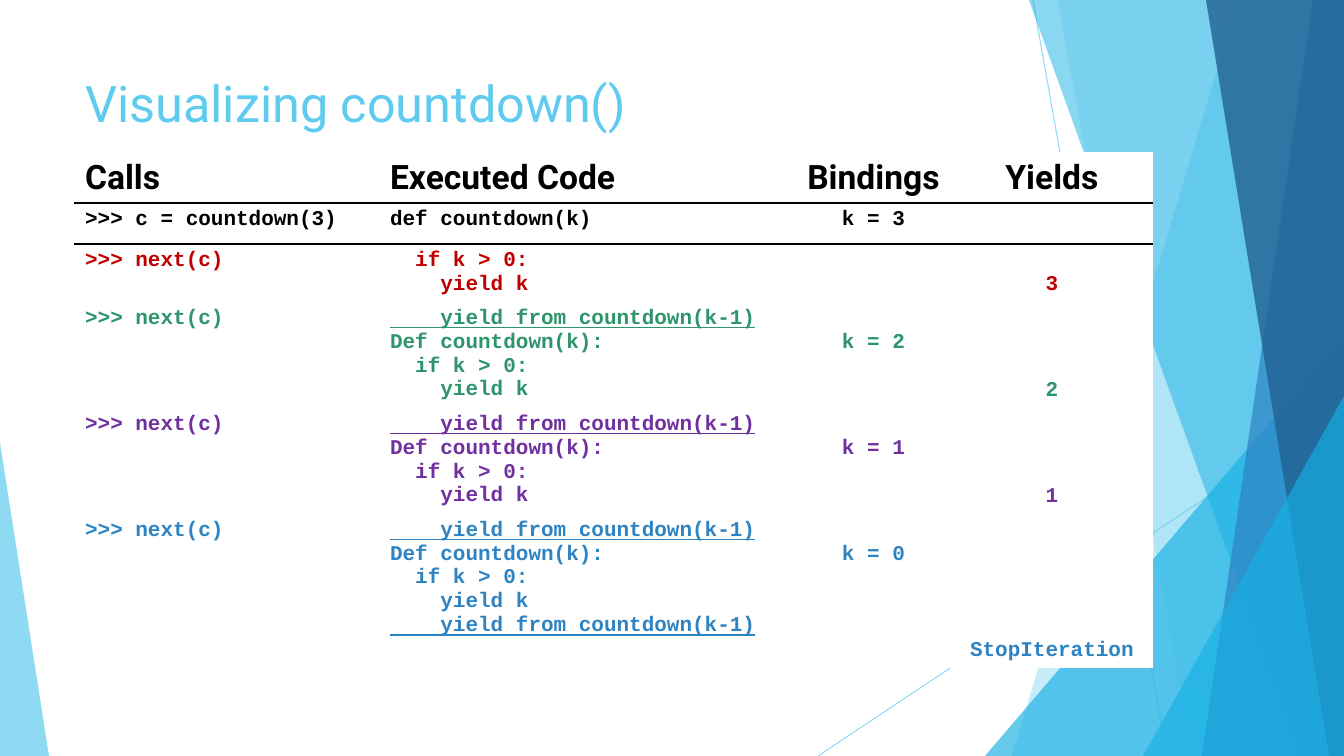
from lxml import etree
from pptx import Presentation
from pptx import util as u
from pptx.dml.color import RGBColor
from pptx.enum import shapes, text
from pptx.oxml import ns

PX = 914400 / 100.8
HUES = {"sky": "5FCBEF", "cyan": "17B0E4", "blue": "2E83C3", "navy": "226292",
        "black": "000000", "white": "FFFFFF", "red": "C00000",
        "green": "2E946B", "plum": "7030A0"}


def px(n):
    return u.Emu(round(n * PX))


def tint(fill, node, hue, alpha):
    fill.solid()
    fill.fore_color.rgb = RGBColor.from_string(HUES[hue])
    for clr in node.iter(ns.qn("a:srgbClr")):
        etree.SubElement(clr, ns.qn("a:alpha"), val=str(alpha * 1000))


deck = Presentation()
deck.slide_width, deck.slide_height = px(1344), px(756)
slide = deck.slides.add_slide(deck.slide_layouts[5])
parts = slide.shapes

for ends in [(1033, 0, 1167, 756), (1344, 406, 818, 756)]:
    line = parts.add_connector(shapes.MSO_CONNECTOR.STRAIGHT, *map(px, ends))
    tint(line.line.fill, line.element, "sky", 70)
    line.line.width = u.Pt(0.75)
    etree.SubElement(line.element.spPr, ns.qn("a:effectLst"))

decor = [("band", (1238, 1012), "sky", 36),
         ("band", (1058, 1192), "sky", 20),
         ("peak", (985, 336, 359, 420, 1), "cyan", 66),
         ("band", (1029, 1301), "cyan", 50),
         ("band", (1313, 1202), "blue", 70),
         ("band", (1206, 1329), "navy", 80),
         ("peak", (1143, 396, 201, 360, 1), "cyan", 66),
         ("peak", (0, 443, 49, 313, 0), "sky", 70)]
for kind, spot, hue, alpha in decor:
    if kind == "band":
        top, foot = spot
        path = parts.build_freeform(top, 0, scale=PX)
        path.add_line_segments([(1344, 0), (1344, 756), (foot, 756)])
        shape = path.convert_to_shape()
    else:
        shape = parts.add_shape(shapes.MSO_SHAPE.ISOSCELES_TRIANGLE,
                                *map(px, spot[:4]))
        shape.adjustments[0] = spot[4]
    tint(shape.fill, shape.element, hue, alpha)
    shape.line.fill.background()
    shape.shadow.inherit = False

title = parts.title
title.left, title.top, title.width, title.height = map(px, (75, 67, 948, 145))
frame = title.text_frame
frame.text = "Visualizing countdown()"
frame.vertical_anchor = text.MSO_ANCHOR.TOP
frame.auto_size = text.MSO_AUTO_SIZE.NONE
frame.paragraphs[0].alignment = text.PP_ALIGN.LEFT
font = frame.paragraphs[0].runs[0].font
font.name, font.size = "Roboto", u.Pt(36)
font.color.rgb = RGBColor.from_string(HUES["sky"])

step = "    yield from countdown(k-1)"
body = "  if k > 0:\n    yield k"
code = f"{step}\nDef countdown(k):\n{body}"
call = ">>> next(c)"
rows = [("black", 50, ["Calls", "Executed Code", "Bindings", "Yields"], 0),
        ("black", 41, [">>> c = countdown(3)", "def countdown(k)", "k = 3", ""], 0),
        ("red", 58, [call, body, "", "3"], 1),
        ("green", 106, [call, code, "k = 2", "2"], 3),
        ("plum", 105, [call, code, "k = 1", "1"], 3),
        ("blue", 153, [call, f"{code}\n{step}", "k = 0", "StopIteration"], 5)]
wide = [305, 415, 157, 200]
high = [row[1] for row in rows]
grid = parts.add_table(len(rows), len(wide), px(75), px(153),
                       px(sum(wide)), px(sum(high))).table
grid.first_row = grid.horz_banding = False
for col, w in zip(grid.columns, wide):
    col.width = px(w)

for r, (hue, h, words, drop) in enumerate(rows):
    grid.rows[r].height = px(h)
    for c, word in enumerate(words):
        cell = grid.cell(r, c)
        cell.fill.solid()
        cell.fill.fore_color.rgb = RGBColor.from_string(HUES["white"])
        cell.text_frame.text = word
        skip = drop if c == 3 else int(c == 2 and r > 2)
        cell.margin_top = px(5 + 24 * skip)
        for para in cell.text_frame.paragraphs:
            if c > 1:
                para.alignment = text.PP_ALIGN.CENTER
            for run in para.runs:
                font = run.font
                font.name = "Courier New" if r else "Roboto"
                font.size = u.Pt(15 if r else 24)
                font.bold = True
                font.underline = run.text == step
                font.color.rgb = RGBColor.from_string(HUES[hue])
        props = cell._tc.get_or_add_tcPr()
        for tag, used in [("a:lnB", r < 2), ("a:lnT", r in (1, 2))]:
            if used:
                edge = etree.Element(ns.qn(tag), w=str(u.Pt(1)))
                fill = etree.SubElement(edge, ns.qn("a:solidFill"))
                etree.SubElement(fill, ns.qn("a:srgbClr"), val=HUES["black"])
                props.insert(0, edge)

deck.save("out.pptx")
